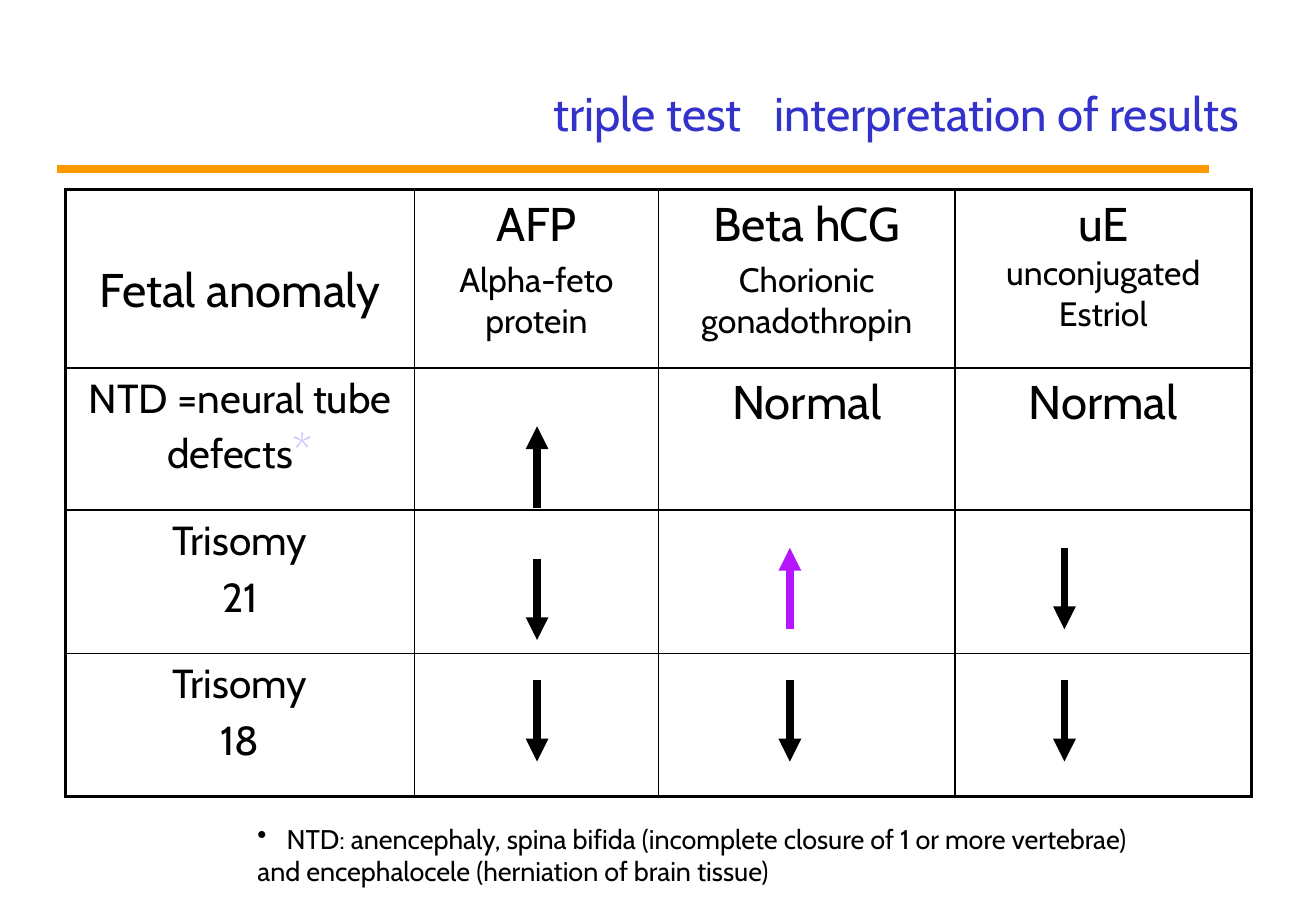
from dataclasses import dataclass

from lxml import etree
from pptx import Presentation
from pptx.dml.color import RGBColor
from pptx.enum.shapes import MSO_CONNECTOR
from pptx.enum.text import MSO_ANCHOR, PP_ALIGN
from pptx.oxml.ns import qn
from pptx.shapes.connector import Connector
from pptx.slide import Slide
from pptx.table import Table, _Cell
from pptx.text.text import TextFrame, _Paragraph
from pptx.util import Inches, Pt

STRAIGHT = MSO_CONNECTOR.STRAIGHT
MIDDLE = MSO_ANCHOR.MIDDLE
CENTER, LEFT, RIGHT = PP_ALIGN.CENTER, PP_ALIGN.LEFT, PP_ALIGN.RIGHT


@dataclass(frozen=True)
class Theme:
    font: str = "Cabin"
    ink: str = "000000"
    title: str = "3333CC"
    rule: str = "FF9900"
    star: str = "CCCCFF"
    rise: str = "B515FF"
    large: int = 28
    medium: int = 24
    small: int = 20
    note: int = 16
    stroke: float = 4.5
    outer_border: float = 2.25
    inner_border: float = 1
    space_ratio: float = 0.2


THEME = Theme()


@dataclass(frozen=True)
class Span:
    text: str
    size: int
    color: str = THEME.ink
    break_after: bool = False
    letter_gap: float = 0


@dataclass(frozen=True)
class Arrow:
    x: float
    top: float
    up: bool = False
    color: str = THEME.ink


Lines = list[list[Span]]

ARROW_LENGTH = 0.67
AFP_X, HCG_X, ESTRIOL_X = 4.42, 6.5, 8.76
ARROWS = [
    Arrow(AFP_X, 3.51, up=True),
    Arrow(AFP_X, 4.6),
    Arrow(HCG_X, 4.51, up=True, color=THEME.rise),
    Arrow(ESTRIOL_X, 4.51),
    *[Arrow(x, 5.6) for x in (AFP_X, HCG_X, ESTRIOL_X)],
]

TITLE: Lines = [[
    Span("triple test", THEME.large, THEME.title),
    Span(" ", THEME.large, THEME.title, letter_gap=13),
    Span("interpretation of results", THEME.large, THEME.title),
]]
NOTE: Lines = [
    [Span("NTD: anencephaly, spina bifida (incomplete closure of 1 or more vertebrae)", THEME.note)],
    [Span("and encephalocele (herniation of brain tissue)", THEME.note)],
]
NORMAL: Lines = [[Span("Normal", THEME.large)]]

COLUMN_WIDTHS = [2.87, 2.01, 2.44, 2.44]
ROW_HEIGHTS = [1.47, 1.17, 1.18, 1.18]
HEADING_TOP = 0.6


def heading(name: str, detail: str) -> Lines:
    return [[Span(name, THEME.large)], [Span(detail, THEME.small)]]


def trisomy(number: str) -> Lines:
    return [[Span("Trisomy", THEME.medium)], [Span(number, THEME.medium)]]


ROWS: list[list[Lines]] = [
    [
        [[Span("Fetal anomaly", THEME.large)]],
        heading("AFP", "Alpha-feto protein"),
        heading("Beta hCG", "Chorionic gonadothropin"),
        [[Span("uE", THEME.large, break_after=True), Span("unconjugated Estriol", THEME.small)]],
    ],
    [
        [[Span("NTD =neural tube defects", THEME.medium), Span("*", THEME.large, THEME.star)]],
        [], NORMAL, NORMAL,
    ],
    [trisomy("21"), [], [], []],
    [trisomy("18"), [], [], []],
]


def write_span(para: _Paragraph, span: Span) -> None:
    run = para.add_run()
    run.text = span.text
    run.font.name = THEME.font
    run.font.size = Pt(span.size)
    run.font.color.rgb = RGBColor.from_string(span.color)
    if span.letter_gap:
        run.font._element.set("spc", str(round(span.letter_gap * 100)))
    if span.break_after:
        para.add_line_break()


def write_lines(frame: TextFrame, lines: Lines, align: PP_ALIGN, space_ratio: float = 0) -> None:
    """Write one paragraph per line; space_ratio is the gap above it per type size."""
    for index, spans in enumerate(lines):
        para = frame.add_paragraph() if index else frame.paragraphs[0]
        para.alignment = align
        if index and space_ratio:
            para.space_before = Pt(spans[0].size * space_ratio)
        for span in spans:
            write_span(para, span)


def add_text(page: Slide, left: float, top: float, width: float, height: float,
             lines: Lines, align: PP_ALIGN) -> TextFrame:
    box = page.shapes.add_textbox(Inches(left), Inches(top), Inches(width), Inches(height))
    box.text_frame.word_wrap = True
    write_lines(box.text_frame, lines, align)
    return box.text_frame


def add_bullet(para: _Paragraph, indent: float) -> None:
    properties = para._p.get_or_add_pPr()
    properties.set("marL", str(Inches(indent)))
    properties.set("indent", str(-Inches(indent)))
    etree.SubElement(properties, qn("a:buChar"), char="•")


def add_line(page: Slide, x1: float, y1: float, x2: float, y2: float, color: str) -> Connector:
    line = page.shapes.add_connector(STRAIGHT, Inches(x1), Inches(y1), Inches(x2), Inches(y2))
    line.line.color.rgb = RGBColor.from_string(color)
    line.line.width = Pt(THEME.stroke)
    etree.SubElement(line._element.spPr, qn("a:effectLst"))
    return line


def add_arrow(page: Slide, arrow: Arrow) -> None:
    ends = [arrow.top, arrow.top + ARROW_LENGTH]
    start, tip = reversed(ends) if arrow.up else ends
    line = add_line(page, arrow.x, start, arrow.x, tip, arrow.color)
    etree.SubElement(line.line._get_or_add_ln(), qn("a:tailEnd"), type="triangle")


def set_borders(cell: _Cell, row: int, column: int) -> None:
    """Draw the table's outer edges heavier than its inner grid."""
    outer_sides = {
        "L": column == 0,
        "R": column == len(COLUMN_WIDTHS) - 1,
        "T": row == 0,
        "B": row == len(ROW_HEIGHTS) - 1,
    }
    properties = cell._tc.get_or_add_tcPr()
    for position, (side, outer) in enumerate(outer_sides.items()):
        width = THEME.outer_border if outer else THEME.inner_border
        border = etree.Element(qn(f"a:ln{side}"), w=str(Pt(width)))
        fill = etree.SubElement(border, qn("a:solidFill"))
        etree.SubElement(fill, qn("a:srgbClr"), val=THEME.ink)
        properties.insert(position, border)


def add_results_table(page: Slide) -> Table:
    frame = page.shapes.add_table(len(ROW_HEIGHTS), len(COLUMN_WIDTHS), Inches(0.54), Inches(1.56),
                                  Inches(sum(COLUMN_WIDTHS)), Inches(sum(ROW_HEIGHTS)))
    table = frame.table
    table.first_row = table.horz_banding = False
    for column, width in zip(table.columns, COLUMN_WIDTHS):
        column.width = Inches(width)
    for row, height in zip(table.rows, ROW_HEIGHTS):
        row.height = Inches(height)
    for row_index, row_cells in enumerate(ROWS):
        for column_index, lines in enumerate(row_cells):
            cell = table.cell(row_index, column_index)
            cell.margin_left = cell.margin_right = Inches(0.11)
            cell.fill.background()
            set_borders(cell, row_index, column_index)
            write_lines(cell.text_frame, lines, CENTER, THEME.space_ratio)
    table.cell(0, 0).margin_top = Inches(HEADING_TOP)
    return table


def main() -> None:
    deck = Presentation()
    deck.slide_width, deck.slide_height = Inches(10.83), Inches(7.5)
    page = deck.slides.add_slide(deck.slide_layouts[6])
    title = add_text(page, 0.54, 0.3, 9.75, 1.25, TITLE, RIGHT)
    title.vertical_anchor = MIDDLE
    add_results_table(page)
    for arrow in ARROWS:
        add_arrow(page, arrow)
    note = add_text(page, 2.02, 6.72, 7.73, 0.64, NOTE, LEFT)
    add_bullet(note.paragraphs[0], 0.24)
    add_line(page, 0.47, 1.39, 9.95, 1.39, THEME.rule)
    deck.save("out.pptx")


if __name__ == "__main__":
    main()
